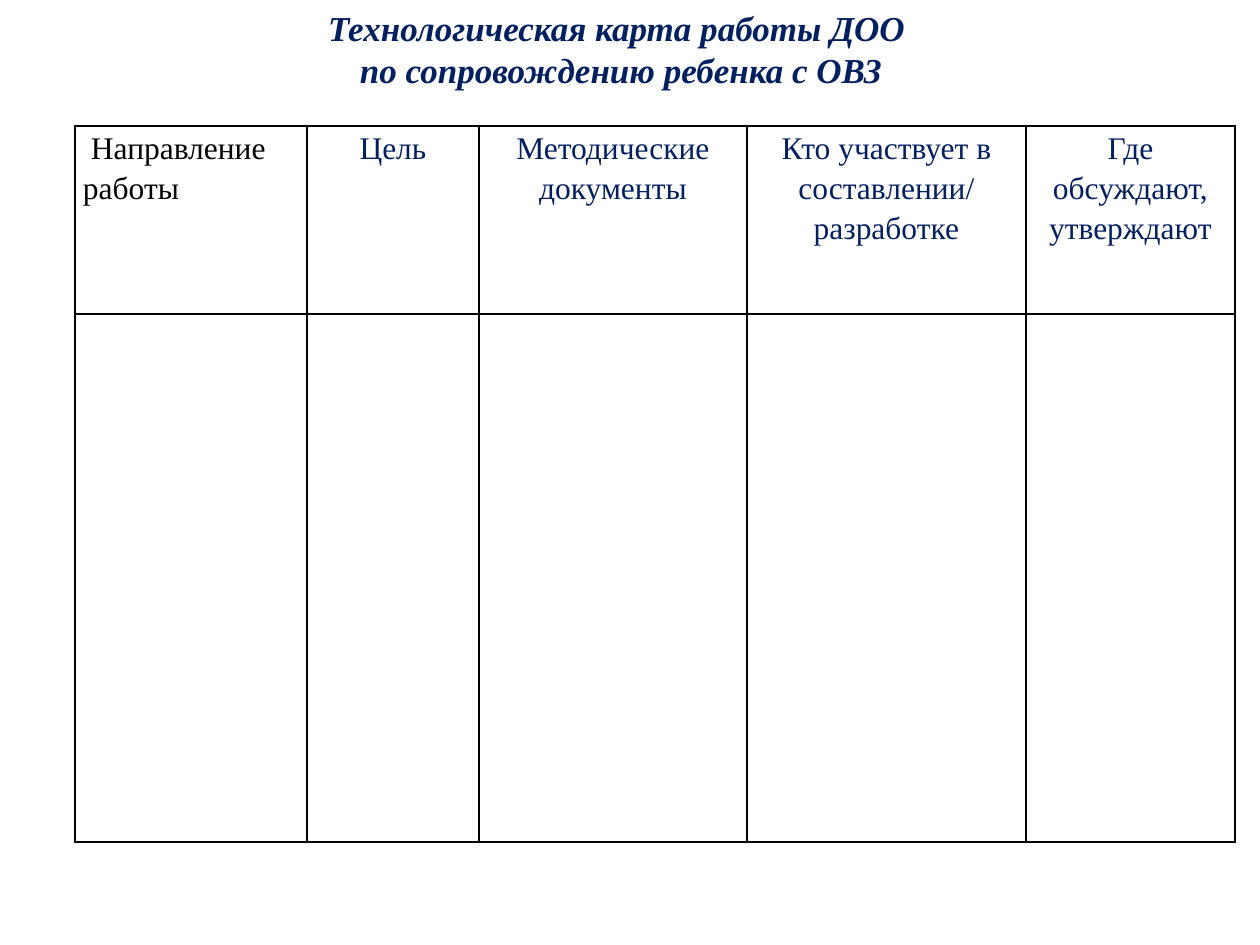
from dataclasses import dataclass

from lxml import etree
from pptx import Presentation
from pptx import util as u
from pptx.dml.color import RGBColor
from pptx.enum import text
from pptx.oxml.ns import qn


@dataclass(frozen=True)
class Theme:
    font: str = "Times New Roman"
    navy: str = "002060"
    black: str = "000000"
    white: str = "FFFFFF"
    title_size: int = 20
    cell_size: int = 18
    border: int = 1


T = Theme()
TITLE = ["Технологическая карта работы ДОО ", "по сопровождению ребенка с ОВЗ"]
HEADERS = ["Направление работы", "Цель", "Методические документы",
           "Кто участвует в составлении/ разработке", "Где обсуждают, утверждают"]
COL_WIDTHS = [232, 172, 268, 279, 209]
ROW_HEIGHTS = [188, 528]


def px(n):
    return u.Emu(round(n * 914400 / 126))


def add_run(p, words, size, color, bold=False, italic=False):
    r = p.add_run()
    r.text = words
    r.font.name = T.font
    r.font.size = u.Pt(size)
    r.font.bold = bold
    r.font.italic = italic
    r.font.color.rgb = RGBColor.from_string(color)


def add_title(s, lines):
    sp = s.shapes.title
    sp.left, sp.top, sp.width, sp.height = px(39), px(0), px(1164), px(97)
    tf = sp.text_frame
    tf.word_wrap = True
    tf.auto_size = text.MSO_AUTO_SIZE.SHAPE_TO_FIT_TEXT
    tf.vertical_anchor = text.MSO_ANCHOR.MIDDLE
    for i, line in enumerate(lines):
        p = tf.add_paragraph() if i else tf.paragraphs[0]
        p.alignment = text.PP_ALIGN.CENTER
        add_run(p, line, T.title_size, T.navy, bold=True, italic=True)


def set_borders(cell):
    tcPr = cell._tc.get_or_add_tcPr()
    for i, side in enumerate(("a:lnL", "a:lnR", "a:lnT", "a:lnB")):
        ln = etree.Element(qn(side), w=str(u.Pt(T.border)))
        fill = etree.SubElement(ln, qn("a:solidFill"))
        etree.SubElement(fill, qn("a:srgbClr"), val=T.black)
        tcPr.insert(i, ln)


def style_cell(cell):
    cell.fill.solid()
    cell.fill.fore_color.rgb = RGBColor.from_string(T.white)
    set_borders(cell)


def fill_header(cell, words, first):
    cell.margin_left = cell.margin_right = px(8)
    cell.margin_top = cell.margin_bottom = 0
    p = cell.text_frame.paragraphs[0]
    p.line_spacing = 1.15
    if first:
        p.alignment = text.PP_ALIGN.LEFT
        p._p.get_or_add_pPr().set("indent", str(px(8)))
    else:
        p.alignment = text.PP_ALIGN.CENTER
    add_run(p, words, T.cell_size, T.black if first else T.navy)


def add_plan_table(s):
    frame = s.shapes.add_table(len(ROW_HEIGHTS), len(COL_WIDTHS), px(75), px(126),
                               px(sum(COL_WIDTHS)), px(sum(ROW_HEIGHTS)))
    table = frame.table
    table.first_row = table.horz_banding = False
    for col, width in zip(table.columns, COL_WIDTHS):
        col.width = px(width)
    for row, height in zip(table.rows, ROW_HEIGHTS):
        row.height = px(height)
    for cell in table.iter_cells():
        style_cell(cell)
    for i, words in enumerate(HEADERS):
        fill_header(table.cell(0, i), words, first=i == 0)


def main():
    prs = Presentation()
    prs.slide_width, prs.slide_height = px(1260), px(945)
    s = prs.slides.add_slide(prs.slide_layouts[5])
    add_title(s, TITLE)
    add_plan_table(s)
    prs.save("out.pptx")


if __name__ == "__main__":
    main()
